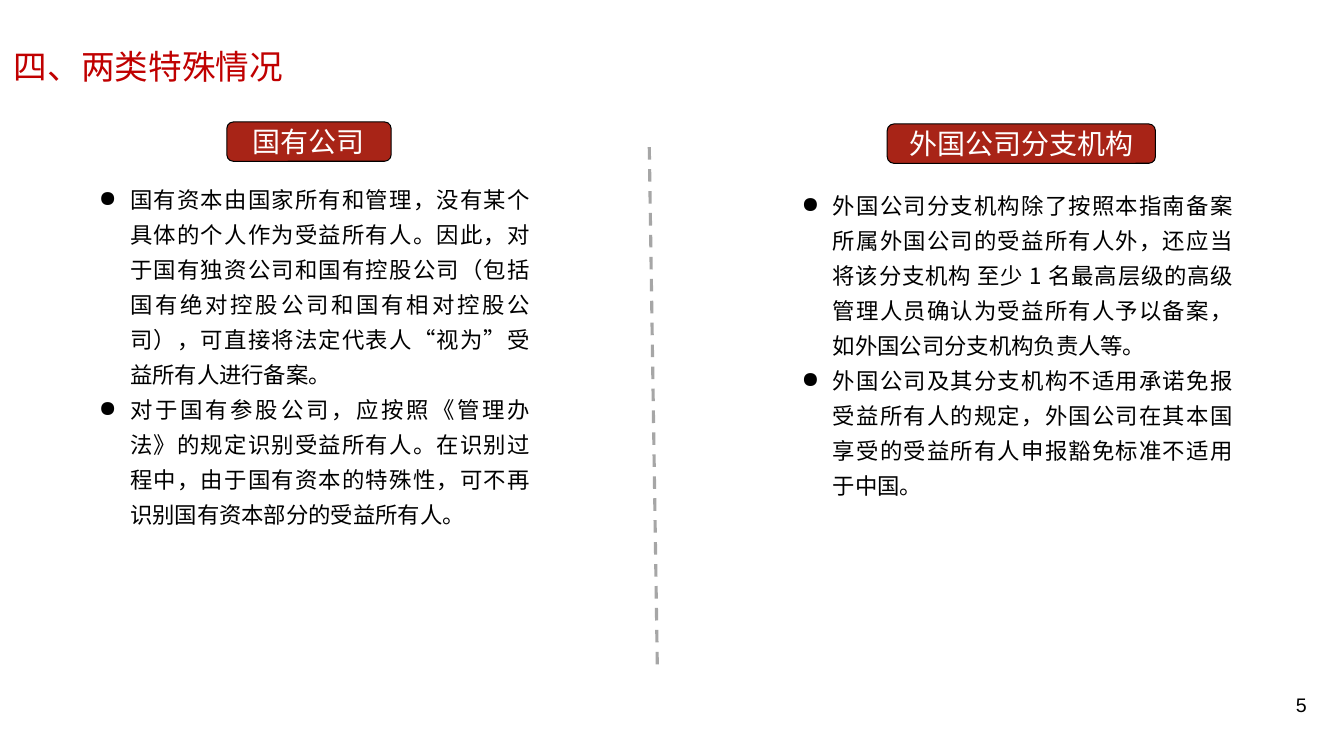
from pptx import Presentation
from pptx.dml.color import RGBColor
from pptx.enum.dml import MSO_LINE
from pptx.enum.shapes import MSO_CONNECTOR, MSO_SHAPE
from pptx.enum.text import MSO_ANCHOR, PP_ALIGN
from pptx.oxml.ns import qn
from pptx.util import Inches, Pt
from lxml.etree import SubElement

TITLE = "四、两类特殊情况"
PAGE = "5"
# Each column: heading, heading box, body box, bullet points
COLUMNS = [
    ("国有公司", (2.25, 1.21, 1.63, 0.39), (0.98, 1.77, 4.28, 3.74), [
        "国有资本由国家所有和管理，没有某个具体的个人作为受益所有人。因此，对于国有独资公司和国有控股公司（包括国有绝对控股公司和国有相对控股公司），可直接将法定代表人“视为”受益所有人进行备案。",
        "对于国有参股公司，应按照《管理办法》的规定识别受益所有人。在识别过程中，由于国有资本的特殊性，可不再识别国有资本部分的受益所有人。",
    ]),
    ("外国公司分支机构", (8.8, 1.23, 2.66, 0.39), (7.95, 1.83, 4.28, 3.39), [
        "外国公司分支机构除了按照本指南备案所属外国公司的受益所有人外，还应当将该分支机构 至少 1 名最高层级的高级管理人员确认为受益所有人予以备案，如外国公司分支机构负责人等。",
        "外国公司及其分支机构不适用承诺免报受益所有人的规定，外国公司在其本国享受的受益所有人申报豁免标准不适用于中国。",
    ]),
]
THEME = {
    "font": "Noto Sans CJK SC", "number_font": "Arial",
    "title": "C00000", "pill": "A82417", "light": "FFFFFF",
    "text": "000000", "divider": "A6A6A6",
    "title_size": 24, "heading_size": 20, "body_size": 16, "number_size": 14,
    "body_line": 25, "indent": 0.31,
}


def rgb(name):
    return RGBColor.from_string(THEME[name])


def write(shape, lines, size, color="text", font="font", align=PP_ALIGN.LEFT,
          anchor=MSO_ANCHOR.TOP, insets=(0.1, 0.05), bullet=None, spacing=None):
    tf = shape.text_frame
    tf.word_wrap = True
    tf.vertical_anchor = anchor
    tf.margin_left = tf.margin_right = Inches(insets[0])
    tf.margin_top = tf.margin_bottom = Inches(insets[1])
    for i, line in enumerate(lines):
        p = tf.add_paragraph() if i else tf.paragraphs[0]
        p.alignment = align
        if spacing:
            p.line_spacing = Pt(spacing)
        if bullet:
            pPr = p._p.get_or_add_pPr()
            pPr.set("marL", str(Inches(THEME["indent"])))
            pPr.set("indent", str(-Inches(THEME["indent"])))
            SubElement(pPr, qn("a:buChar")).set("char", bullet)
        r = p.add_run()
        r.text = line
        r.font.size = Pt(THEME[size])
        r.font.name = THEME[font]
        r.font.color.rgb = rgb(color)
        SubElement(r._r.get_or_add_rPr(), qn("a:ea")).set("typeface", THEME[font])


def box(at):
    return [Inches(v) for v in at]


prs = Presentation()
prs.slide_width, prs.slide_height = Inches(13.33), Inches(7.5)
s = prs.slides.add_slide(prs.slide_layouts[6])

# Title and page number
write(s.shapes.add_textbox(*box((0.04, 0.41, 5.59, 0.5))), [TITLE], "title_size",
      color="title", anchor=MSO_ANCHOR.MIDDLE, insets=(0.1, 0))
write(s.shapes.add_textbox(*box((12.49, 6.83, 0.57, 0.37))), [PAGE], "number_size",
      font="number_font", align=PP_ALIGN.RIGHT)

# Dashed divider
divider = s.shapes.add_connector(MSO_CONNECTOR.STRAIGHT, *box((6.44, 1.46, 6.52, 6.63)))
divider.line.color.rgb = rgb("divider")
divider.line.width = Pt(2.25)
divider.line.dash_style = MSO_LINE.DASH
SubElement(divider._element.spPr, qn("a:effectLst"))

# Columns
for heading, pill_at, body_at, points in COLUMNS:
    pill = s.shapes.add_shape(MSO_SHAPE.ROUNDED_RECTANGLE, *box(pill_at))
    pill.shadow.inherit = False
    pill.fill.solid()
    pill.fill.fore_color.rgb = rgb("pill")
    pill.line.color.rgb = rgb("text")
    pill.line.width = Pt(0.75)
    write(pill, [heading], "heading_size", color="light", align=PP_ALIGN.CENTER,
          anchor=MSO_ANCHOR.MIDDLE, insets=(0.1, 0))
    write(s.shapes.add_textbox(*box(body_at)), points, "body_size",
          align=PP_ALIGN.JUSTIFY, insets=(0, 0), bullet="●",
          spacing=THEME["body_line"])

prs.save("out.pptx")
